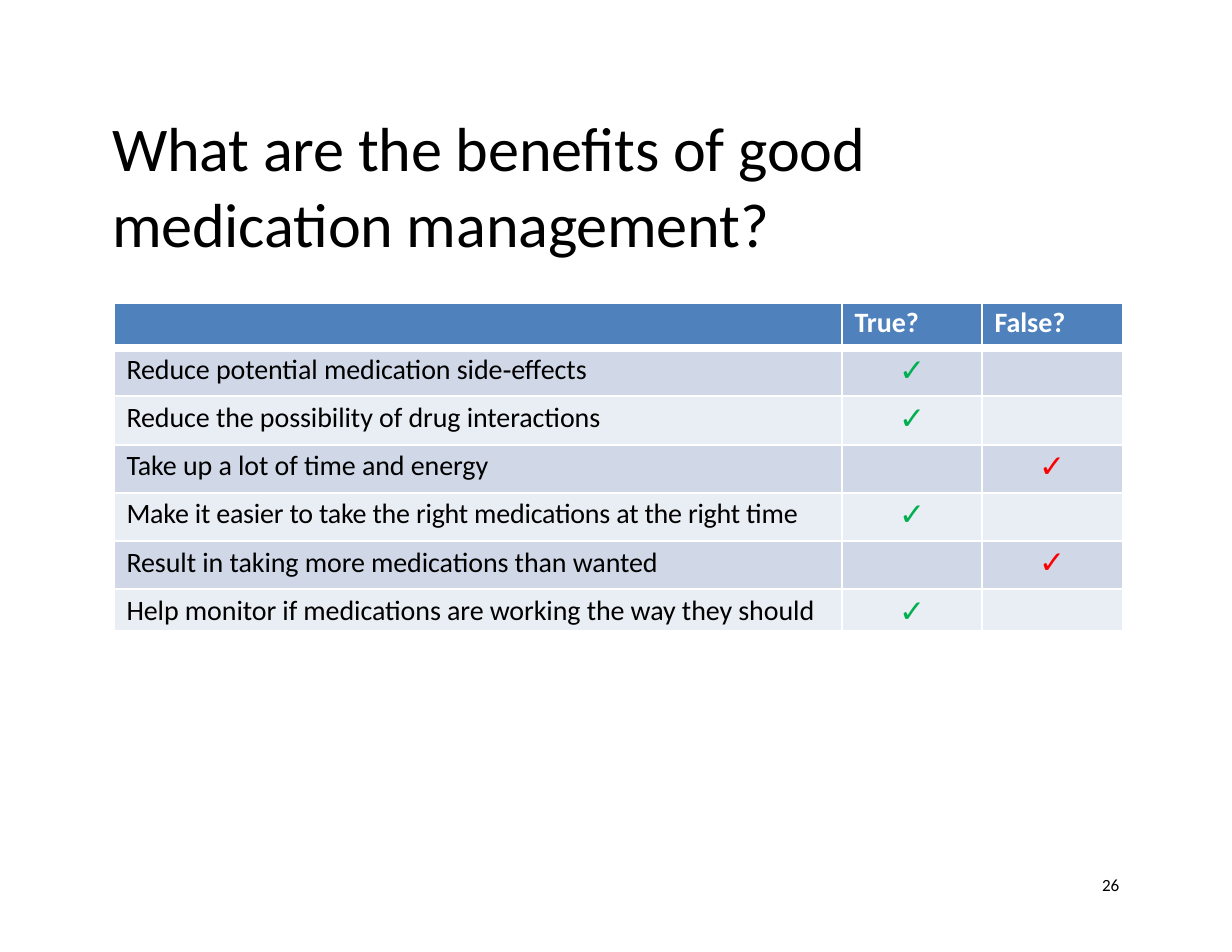
"""Build a true-or-false slide on the benefits of good medication management."""
import lxml.etree
import pptx
import pptx.dml.color
import pptx.enum.text
import pptx.oxml.ns
import pptx.util
from dataclasses import dataclass

Inches, Pt = pptx.util.Inches, pptx.util.Pt
Align = pptx.enum.text.PP_ALIGN
qn = pptx.oxml.ns.qn


@dataclass(frozen=True)
class Theme:
    text_font: str = "Calibri"
    mark_font: str = "Arial"
    black: str = "000000"
    white: str = "FFFFFF"
    header: str = "4F81BD"
    bands: tuple = ("D0D8E8", "E9EDF4")
    true_mark: str = "00B050"
    false_mark: str = "FF0000"
    title_size: int = 40
    body_size: int = 18
    mark_size: int = 20
    number_size: int = 11


theme = Theme()


def write(frame, text, size=theme.body_size, color=theme.black, font=theme.text_font,
          bold=False, align=Align.LEFT, indent=0, before=0, line=None, tracking=0):
    paragraph = frame.paragraphs[0]
    paragraph.alignment = align
    paragraph.space_before = Pt(before)
    if line:
        paragraph.line_spacing = line
    if indent:
        properties = paragraph._p.get_or_add_pPr()
        properties.set("marL", str(Inches(indent)))
        properties.set("indent", "0")
    run = paragraph.add_run()
    run.text = text
    run.font.size = Pt(size)
    run.font.name = font
    run.font.bold = bold
    run.font.color.rgb = pptx.dml.color.RGBColor.from_string(color)
    if tracking:
        run._r.get_or_add_rPr().set("spc", str(round(tracking * 100)))


def draw_border(cell, side, width):
    border = lxml.etree.SubElement(cell._tc.get_or_add_tcPr(), qn(f"a:ln{side}"), w=str(Pt(width)))
    fill = lxml.etree.SubElement(border, qn("a:solidFill"))
    lxml.etree.SubElement(fill, qn("a:srgbClr"), val=theme.white)


deck = pptx.Presentation()
deck.slide_width, deck.slide_height = Inches(11), Inches(8.5)
slide = deck.slides.add_slide(deck.slide_layouts[5])

title = slide.shapes.title
title.left, title.top, title.width, title.height = Inches(1), Inches(0.87), Inches(8.99), Inches(1.8)
number = slide.shapes.add_textbox(Inches(9.8), Inches(7.83), Inches(0.24), Inches(0.18))
for shape, top_inset in ((title, 0.09), (number, 0)):
    frame = shape.text_frame
    frame.margin_left = frame.margin_right = frame.margin_bottom = 0
    frame.margin_top = Inches(top_inset)
    frame.word_wrap = True
    frame.auto_size = pptx.enum.text.MSO_AUTO_SIZE.NONE
    frame.vertical_anchor = pptx.enum.text.MSO_ANCHOR.TOP
write(title.text_frame, "What are the benefits of good medication management?",
      size=theme.title_size, line=1.02, tracking=-0.1)
write(number.text_frame, "26", size=theme.number_size, indent=0.04, line=Pt(11.5))

benefits = [
    ("Reduce potential medication side‐effects", True, -0.05),
    ("Reduce the possibility of drug interactions", True, -0.05),
    ("Take up a lot of time and energy", False, -0.05),
    ("Make it easier to take the right medications at the right time", True, -0.15),
    ("Result in taking more medications than wanted", False, -0.05),
    ("Help monitor if medications are working the way they should", True, -0.05),
]
column_widths = [6.49, 1.25, 1.25]
row_heights = [0.4] + [0.43] * 5 + [0.37]
quiz = slide.shapes.add_table(len(row_heights), len(column_widths), Inches(1.03), Inches(2.71),
                              Inches(sum(column_widths)), Inches(sum(row_heights))).table
quiz.first_row = quiz.horz_banding = False
quiz._tbl.tblPr.find(qn("a:tableStyleId")).text = "{2D5ABB26-0587-4C30-8999-92F81FD0307C}"
for column, width in zip(quiz.columns, column_widths):
    column.width = Inches(width)

last_row, last_column = len(row_heights) - 1, len(column_widths) - 1
for r, height in enumerate(row_heights):
    quiz.rows[r].height = Inches(height)
    for c in range(len(column_widths)):
        cell = quiz.cell(r, c)
        cell.margin_left = cell.margin_right = cell.margin_bottom = 0
        cell.margin_top = Inches(0.02 if r == 0 else 0.04 if c == 0 else 0.03)
        if c > 0:
            draw_border(cell, "L", 1.5)
        if c < last_column:
            draw_border(cell, "R", 1.5)
        if r > 0:
            draw_border(cell, "T", 6 if r == 1 else 1.5)
        if r < last_row:
            draw_border(cell, "B", 6 if r == 0 else 1.5)
        cell.fill.solid()
        cell.fill.fore_color.rgb = pptx.dml.color.RGBColor.from_string(
            theme.bands[(r - 1) % 2] if r else theme.header)

for c, heading in enumerate(("True?", "False?"), start=1):
    write(quiz.cell(0, c).text_frame, heading, color=theme.white, bold=True,
          indent=0.11, before=1.6)
for r, (benefit, is_true, tracking) in enumerate(benefits, start=1):
    write(quiz.cell(r, 0).text_frame, benefit, indent=0.1, before=2.6, tracking=tracking)
    write(quiz.cell(r, 1 if is_true else 2).text_frame, "✓", size=theme.mark_size,
          color=theme.true_mark if is_true else theme.false_mark, font=theme.mark_font,
          align=Align.CENTER, before=2.5, line=Pt(23.3))

deck.save("out.pptx")
